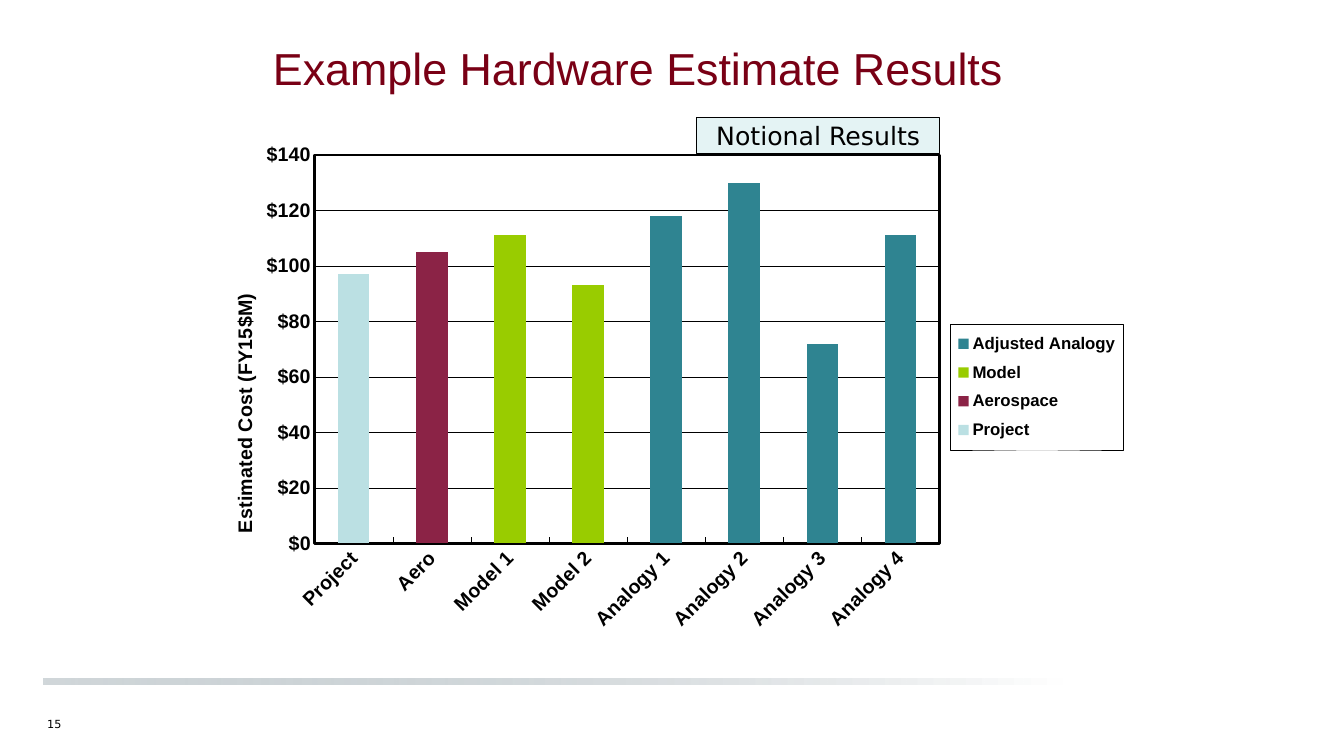
from lxml import etree
from pptx import Presentation
from pptx.chart.data import CategoryChartData
from pptx.dml.color import RGBColor
from pptx.enum.chart import XL_CHART_TYPE, XL_LEGEND_POSITION, XL_TICK_MARK
from pptx.enum.shapes import MSO_SHAPE
from pptx.enum.text import MSO_ANCHOR, PP_ALIGN
from pptx.oxml import parse_xml
from pptx.oxml.ns import nsdecls, qn
from pptx.util import Inches, Pt

BLACK = RGBColor(0x00, 0x00, 0x00)
WHITE = RGBColor(0xFF, 0xFF, 0xFF)
MAROON = RGBColor(0x79, 0x00, 0x15)
SLATE = RGBColor(0x82, 0x93, 0x9B)
PALE_TEAL = RGBColor(0xE4, 0xF3, 0xF4)

TITLE = "Example Hardware Estimate Results"
TAG = "Notional Results"
PAGE = "15"
AXIS_TITLE = "Estimated Cost (FY15$M)"
# series name, colour, estimates by category
SERIES = [
    ("Project", RGBColor(0xBB, 0xE0, 0xE3), {"Project": 97}),
    ("Aerospace", RGBColor(0x8B, 0x23, 0x46), {"Aero": 105}),
    ("Model", RGBColor(0x99, 0xCC, 0x00), {"Model 1": 111, "Model 2": 93}),
    ("Adjusted Analogy", RGBColor(0x2F, 0x84, 0x91),
     {"Analogy 1": 118, "Analogy 2": 130, "Analogy 3": 72, "Analogy 4": 111}),
]
CATEGORIES = [cat for _, _, costs in SERIES for cat in costs]

# left, top, width, height in inches
TITLE_BOX = (0.33, 0.33, 12, 0.68)
CHART_BOX = (2.08, 1.25, 9.23, 5.25)
TAG_BOX = (6.91, 1.17, 2.41, 0.35)
RULE_BOX = (0.43, 6.73, 10.11, 0.06)
PAGE_BOX = (0.37, 7.06, 0.39, 0.24)
# left, top, width, height as shares of the chart
PLOT_SHARE = (0.113, 0.055, 0.671, 0.734)
LEGEND_SHARE = (0.796, 0.374, 0.186, 0.238)
AXIS_TITLE_SHARE = (0.02, 0.31)


def set_font(font, size, name="Arial", color=BLACK, bold=False):
    font.size, font.name, font.bold = Pt(size), name, bold
    font.color.rgb = color


def write(sp, text, size, name, color=BLACK, align=PP_ALIGN.CENTER, wrap=True):
    tf = sp.text_frame
    tf.text = text
    tf.word_wrap = wrap
    tf.vertical_anchor = MSO_ANCHOR.MIDDLE
    p = tf.paragraphs[0]
    p.alignment = align
    set_font(p.runs[0].font, size, name, color)


def place(element, shares, after=None, inner=False):
    """Give a chart part a manual layout, put after the named child."""
    for old in element.findall(qn("c:layout")):
        element.remove(old)
    layout = parse_xml(f"<c:layout {nsdecls('c')}><c:manualLayout/></c:layout>")
    settings = [("layoutTarget", "inner")] if inner else []
    settings += [("xMode", "edge"), ("yMode", "edge"), *zip("xywh", shares)]
    for tag, value in settings:
        etree.SubElement(layout[0], qn(f"c:{tag}")).set("val", str(value))
    if after:
        element.find(qn(after)).addnext(layout)
    else:
        element.insert(0, layout)


def outline(points):
    return parse_xml(
        f'<c:spPr {nsdecls("c", "a")}><a:noFill/><a:ln w="{Pt(points)}">'
        f'<a:solidFill><a:srgbClr val="{BLACK}"/></a:solidFill></a:ln></c:spPr>')


def thin_line(line):
    line.color.rgb = BLACK
    line.width = Pt(0.25)


def add_cost_chart(slide):
    data = CategoryChartData()
    data.categories = CATEGORIES
    for name, _, costs in SERIES:
        data.add_series(name, [costs.get(cat) for cat in CATEGORIES])
    chart = slide.shapes.add_chart(
        XL_CHART_TYPE.COLUMN_STACKED, *map(Inches, CHART_BOX), data).chart
    chart.has_title = False
    set_font(chart.font, 18, "Arial Narrow", bold=True)

    plot = chart.plots[0]
    plot.gap_width, plot.overlap, plot.vary_by_categories = 150, 100, False
    for series, (_, color, _) in zip(plot.series, SERIES):
        series.format.fill.solid()
        series.format.fill.fore_color.rgb = color

    cat_axis, val_axis = chart.category_axis, chart.value_axis
    for axis, tick in ((cat_axis, XL_TICK_MARK.INSIDE), (val_axis, XL_TICK_MARK.NONE)):
        axis.major_tick_mark, axis.minor_tick_mark = tick, XL_TICK_MARK.NONE
        set_font(axis.tick_labels.font, 14, bold=True)
        thin_line(axis.format.line)
    cat_axis._element.find(qn("c:txPr")).find(qn("a:bodyPr")).set("rot", "-2700000")

    val_axis.minimum_scale, val_axis.maximum_scale, val_axis.major_unit = 0, 140, 20
    val_axis.tick_labels.number_format = "\\$#,##0"
    val_axis.tick_labels.number_format_is_linked = False
    val_axis.has_major_gridlines = True
    thin_line(val_axis.major_gridlines.format.line)
    tf = val_axis.axis_title.text_frame
    tf.text = AXIS_TITLE
    set_font(tf.paragraphs[0].runs[0].font, 14, bold=True)
    tf._txBody.find(qn("a:bodyPr")).set("rot", "-5400000")
    place(val_axis.axis_title._element, AXIS_TITLE_SHARE, after="c:tx")

    chart.has_legend = True
    legend = chart.legend
    legend.position = XL_LEGEND_POSITION.RIGHT
    legend.include_in_layout = False
    set_font(legend.font, 12, bold=True)
    place(legend._element, LEGEND_SHARE, after="c:legendPos")
    legend._element.find(qn("c:overlay")).addnext(outline(0.25))

    plot_area = chart._chartSpace.chart.plotArea
    place(plot_area, PLOT_SHARE, inner=True)
    plot_area.append(outline(2))


def add_box(slide, box):
    sp = slide.shapes.add_shape(MSO_SHAPE.RECTANGLE, *map(Inches, box))
    sp.shadow.inherit = False
    return sp


def add_fading_rule(slide):
    sp = add_box(slide, RULE_BOX)
    sp.line.fill.background()
    sp.fill.gradient()
    sp.fill.gradient_angle = 0
    for stop, color, position in zip(sp.fill.gradient_stops, (SLATE, WHITE), (0, 1)):
        stop.color.rgb = color
        stop.position = position
    start = next(sp._element.iter(qn("a:srgbClr")))
    etree.SubElement(start, qn("a:alpha")).set("val", "37000")


def main():
    prs = Presentation()
    prs.slide_width, prs.slide_height = Inches(13.33), Inches(7.5)
    slide = prs.slides.add_slide(prs.slide_layouts[6])

    add_fading_rule(slide)
    page = slide.shapes.add_textbox(*map(Inches, PAGE_BOX))
    write(page, PAGE, 8, "DejaVu Sans", align=PP_ALIGN.LEFT, wrap=False)
    title = slide.shapes.add_textbox(*map(Inches, TITLE_BOX))
    write(title, TITLE, 32, "Arial", MAROON)
    add_cost_chart(slide)

    tag = add_box(slide, TAG_BOX)
    tag.fill.solid()
    tag.fill.fore_color.rgb = PALE_TEAL
    tag.line.color.rgb = BLACK
    tag.line.width = Pt(0.75)
    write(tag, TAG, 18, "DejaVu Sans")
    prs.save("out.pptx")


if __name__ == "__main__":
    main()
